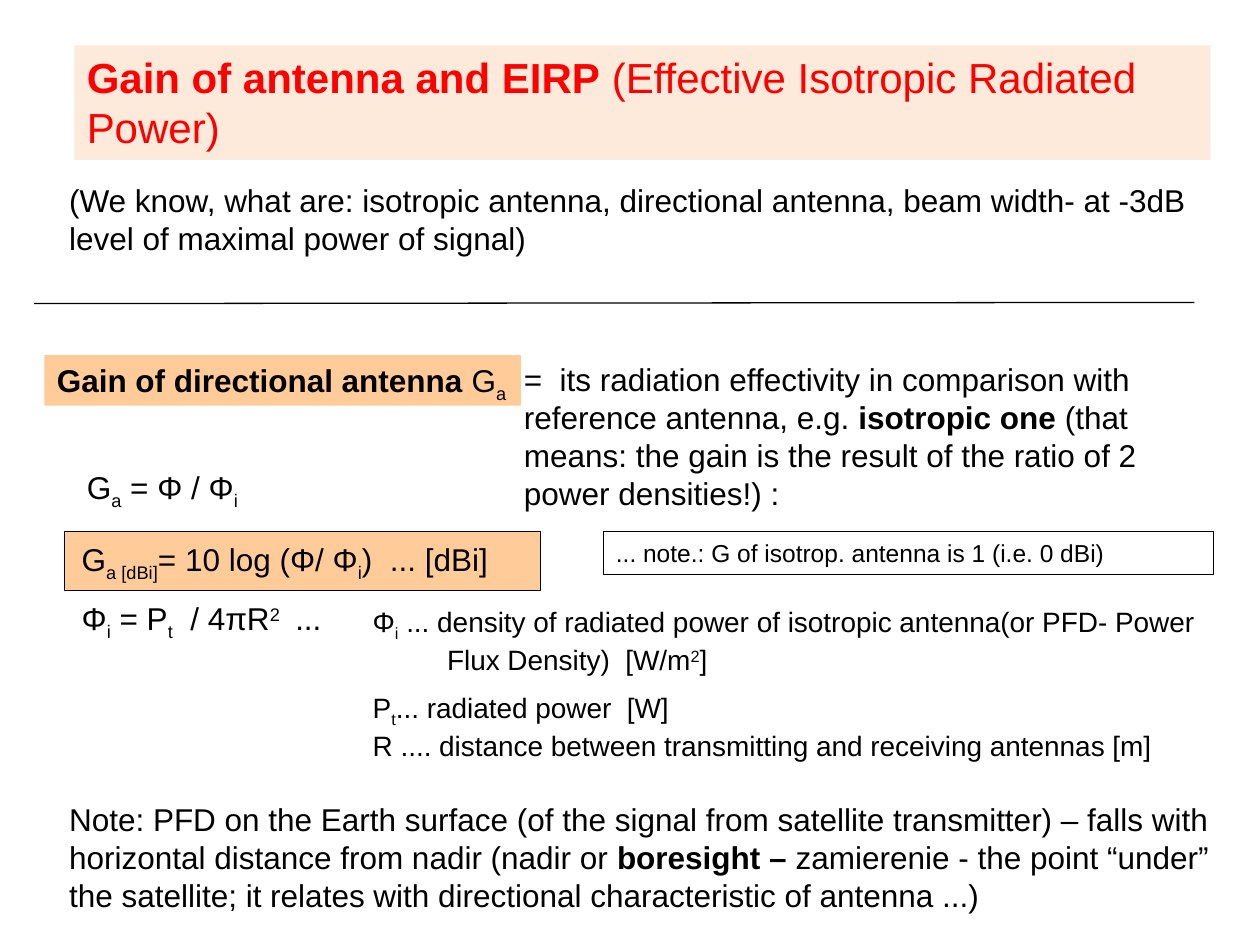
from lxml.etree import SubElement
from pptx import Presentation
from pptx.dml.color import RGBColor
from pptx.enum.shapes import MSO_CONNECTOR, MSO_SHAPE
from pptx.enum.text import MSO_ANCHOR, MSO_AUTO_SIZE, PP_ALIGN
from pptx.oxml.ns import qn
from pptx.util import Pt

THEME = {
    "font": "Arial",
    "title": 24, "body": 18, "legend": 16, "remark": 14,
    "black": RGBColor(0, 0, 0), "red": RGBColor(0xFF, 0, 0),
    "peach": RGBColor(0xFD, 0xEA, 0xDA), "orange": RGBColor(0xFF, 0xCC, 0x99),
    "line": 0.75,
}
BASELINE = {"sub": "-25000", "super": "30000"}

# Each run is (text, style); styles: "" plain, "bold", "sub", "super".
# Each block is a list of paragraphs, boxes are left, top, width, height.
# Back to front.
FORMULA_PANEL = (36.7, 303.8, 272.2, 33.8)
DIVIDER = (19.5, 173.5, 682.5, 172.8)
BLOCKS = [
    {"box": (42.5, 25.9, 649.4, 65.5), "size": "title", "color": "red", "fill": "peach",
     "text": [[("Gain of antenna and EIRP", "bold"),
               (" (Effective Isotropic Radiated Power)", "")]]},
    {"box": (39.6, 305.3, 653, 61.2), "hanging": 91.4, "spaced": [1],
     "text": [[("G", ""), ("a [dBi]", "sub"), ("= 10 log (Φ/ Φ", ""), ("i", "sub"),
               (")  ... [dBi]", "")],
              [("Φ", ""), ("i", "sub"), (" = P", ""), ("t", "sub"), ("  / 4πR", ""),
               ("2   ", "super"), ("...", "")]]},
    {"box": (32.4, 100.1, 658.8, 51.1), "wrap": False,
     "text": [[("(We know, what are: isotropic antenna, directional antenna, "
                "beam width- at -3dB", "")],
              [("level of maximal power of signal)", "")]]},
    {"box": (205.9, 342, 514.1, 94.3), "size": "legend", "hanging": 42.5, "spaced": [1],
     "text": [[("Φ", ""), ("i", "sub"),
               (" ... density of radiated power of isotropic antenna"
                "(or PFD- Power Flux Density)  [W/m", ""), ("2", "super"), ("]", "")],
              [("P", ""), ("t", "sub"), ("... radiated power  [W]", "")],
              [("R .... distance between transmitting and receiving antennas [m]", "")]]},
    {"box": (264.2, 202.3, 424.1, 94.3), "margin": 28.1,
     "text": [[("=  its radiation effectivity in comparison with reference antenna, e.g. ", ""),
               ("isotropic one ", "bold"),
               ("(that means: the gain is the result of the ratio of 2 power densities!) :", "")]]},
    {"box": (32.4, 453.6, 673.9, 72.7),
     "text": [[("Note: PFD on the Earth surface (of the signal from satellite transmitter) – "
                "falls with horizontal distance from nadir (nadir or ", ""),
               ("boresight – ", "bold"),
               ("zamierenie - the point “under” the satellite; it relates with "
                "directional characteristic of antenna ...)", "")]]},
    {"box": (42.5, 264.2, 142.6, 28.8),
     "text": [[("G", ""), ("a", "sub"), (" = Φ / Φ", ""), ("i", "sub")]]},
    {"box": (25.4, 203, 272.2, 28.8), "fill": "orange",
     "text": [[("Gain of directional antenna ", "bold"), ("G", ""), ("a", "sub")]]},
    {"box": (344.9, 303.8, 348.5, 24.5), "size": "remark", "outline": True,
     "text": [[("... note.: G of isotrop. antenna is 1 (i.e. 0 dBi)", "")]]},
]


def add_panel(slide, box, fill=None, outline=False):
    shape = slide.shapes.add_shape(MSO_SHAPE.RECTANGLE, *map(Pt, box))
    shape.shadow.inherit = False
    if fill:
        shape.fill.solid()
        shape.fill.fore_color.rgb = THEME[fill]
    else:
        shape.fill.background()
    if outline:
        shape.line.color.rgb = THEME["black"]
        shape.line.width = Pt(THEME["line"])
    else:
        shape.line.fill.background()
    return shape


def add_run(paragraph, text, style, size, color):
    run = paragraph.add_run()
    run.text = text
    run.font.name = THEME["font"]
    run.font.size = Pt(size)
    run.font.bold = style == "bold"
    run.font.color.rgb = color
    if style in BASELINE:
        run._r.get_or_add_rPr().set("baseline", BASELINE[style])


def add_block(slide, block):
    fill, outline = block.get("fill"), block.get("outline", False)
    if fill or outline:
        shape = add_panel(slide, block["box"], fill, outline)
    else:
        shape = slide.shapes.add_textbox(*map(Pt, block["box"]))
    frame = shape.text_frame
    frame.word_wrap = block.get("wrap", True)
    frame.auto_size = MSO_AUTO_SIZE.SHAPE_TO_FIT_TEXT
    frame.vertical_anchor = MSO_ANCHOR.TOP
    size = THEME[block.get("size", "body")]
    hanging = block.get("hanging", 0)
    for index, runs in enumerate(block["text"]):
        paragraph = frame.add_paragraph() if index else frame.paragraphs[0]
        paragraph.alignment = PP_ALIGN.LEFT
        if index in block.get("spaced", []):
            paragraph.space_before = Pt(size / 2)
        properties = paragraph._p.get_or_add_pPr()
        properties.set("marL", str(Pt(block.get("margin", hanging))))
        properties.set("indent", str(Pt(-hanging)))
        for text, style in runs:
            add_run(paragraph, text, style, size, THEME[block.get("color", "black")])


def add_divider(slide):
    connector = slide.shapes.add_connector(MSO_CONNECTOR.STRAIGHT, *map(Pt, DIVIDER))
    connector.line.color.rgb = THEME["black"]
    connector.line.width = Pt(THEME["line"])
    SubElement(connector._element.spPr, qn("a:effectLst"))


def main():
    presentation = Presentation()
    presentation.slide_width, presentation.slide_height = Pt(720), Pt(540)
    slide = presentation.slides.add_slide(presentation.slide_layouts[6])
    # Panel behind the formulas, then the divider and the text
    add_panel(slide, FORMULA_PANEL, "orange", outline=True)
    add_divider(slide)
    for block in BLOCKS:
        add_block(slide, block)
    presentation.save("out.pptx")


if __name__ == "__main__":
    main()
